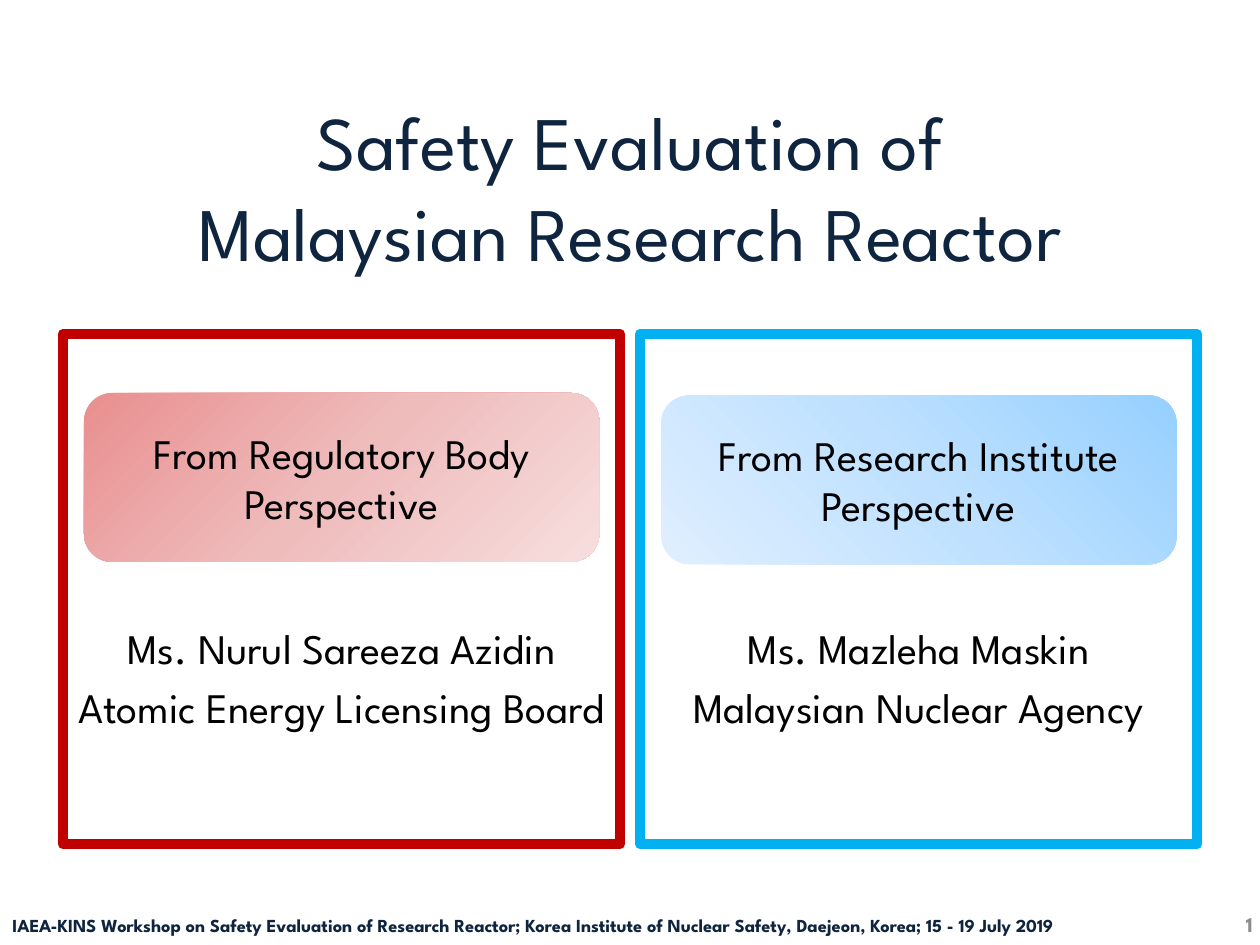
from dataclasses import dataclass

from lxml import etree
from pptx import Presentation
from pptx import util as u
from pptx.dml.color import RGBColor
from pptx.enum import shapes, text
from pptx.oxml import parse_xml
from pptx.oxml.ns import nsdecls, qn

FONT = "League Spartan"
COLORS = {"navy": "0F243E", "black": "000000", "gray": "8C8C8C",
          "red": "C00000", "blue": "00B0F0"}
LINEAR = '<a:lin ang="2700000" scaled="0"/>'
RADIAL = '<a:path path="circle"><a:fillToRect l="100000" b="100000"/></a:path>'


@dataclass
class Panel:
    left: float
    border: str
    heading: str
    heading_top: float
    stops: tuple[str, str, str]
    shading: str
    lines: tuple[str, ...]


PANELS = (
    Panel(36, "red", "From Regulatory Body Perspective", 224.6,
          ("E98F8F", "EFBCBC", "F7DEDE"), LINEAR,
          ("Ms. Nurul Sareeza Azidin", "Atomic Energy Licensing Board")),
    Panel(365.8, "blue", "From Research Institute Perspective", 226,
          ("96D0FF", "BFE1FF", "E0EFFF"), RADIAL,
          ("Ms. Mazleha Maskin", "Malaysian Nuclear Agency")),
)


def place(box, left: float, top: float, width: float, height: float) -> None:
    box.left, box.top, box.width, box.height = map(u.Pt, (left, top, width, height))


def write(box, lines: tuple[str, ...], size: float, color: str, align,
          bold: bool = False, before: float = 0) -> None:
    frame = box.text_frame
    frame.word_wrap = True
    frame.auto_size = text.MSO_AUTO_SIZE.NONE
    frame.vertical_anchor = text.MSO_ANCHOR.MIDDLE
    for index, line in enumerate(lines):
        para = frame.add_paragraph() if index else frame.paragraphs[0]
        para.text = line
        para.alignment = align
        para.space_before = u.Pt(before)
        para.font.name, para.font.size, para.font.bold = FONT, u.Pt(size), bold
        para.font.color.rgb = RGBColor.from_string(COLORS[color])


def add_box(page, kind, left: float, top: float, width: float, height: float):
    box = page.shapes.add_shape(kind, *map(u.Pt, (left, top, width, height)))
    box.shadow.inherit = False
    return box


def fill_gradient(box, stops: tuple[str, ...], shading: str) -> None:
    marks = "".join(f'<a:gs pos="{index * 50000}"><a:srgbClr val="{color}"/></a:gs>'
                    for index, color in enumerate(stops))
    gradient = parse_xml(f'<a:gradFill {nsdecls("a")} rotWithShape="1">'
                         f'<a:gsLst>{marks}</a:gsLst>{shading}</a:gradFill>')
    box._element.spPr.find(qn("a:prstGeom")).addnext(gradient)


def draw_panel(page, panel: Panel) -> None:
    # Frame with the speaker, set below the heading
    frame = add_box(page, shapes.MSO_SHAPE.RECTANGLE, panel.left, 190.8, 318.2, 291.6)
    frame.fill.background()
    frame.line.color.rgb = RGBColor.from_string(COLORS[panel.border])
    frame.line.width = u.Pt(6)
    write(frame, panel.lines, 24, "black", text.PP_ALIGN.CENTER, before=4.8)
    frame.text_frame.margin_top = u.Pt(104)

    # Heading
    heading = add_box(page, shapes.MSO_SHAPE.ROUNDED_RECTANGLE,
                      panel.left + 12, panel.heading_top, 294.5, 96.5)
    heading.line.fill.background()
    fill_gradient(heading, panel.stops, panel.shading)
    write(heading, (panel.heading,), 24, "black", text.PP_ALIGN.CENTER)


def draw_footer(page) -> None:
    note = page.shapes.add_textbox(*map(u.Pt, (0, 518.4, 694.8, 20.2)))
    write(note, ("IAEA-KINS Workshop on Safety Evaluation of Research Reactor; "
                 "Korea Institute of Nuclear Safety, Daejeon, Korea; 15 - 19 July 2019",),
          10.5, "navy", text.PP_ALIGN.LEFT, bold=True)

    # Slide number: turn the run into a field
    number = page.shapes.add_textbox(*map(u.Pt, (555.1, 513.4, 167.8, 28.8)))
    write(number, ("1",), 12, "gray", text.PP_ALIGN.RIGHT, bold=True)
    para = number.text_frame.paragraphs[0]
    span = para.runs[0]
    span.font.name, span.font.size, span.font.bold = FONT, u.Pt(12), True
    span.font.color.rgb = RGBColor.from_string(COLORS["gray"])
    field = etree.Element(qn("a:fld"), type="slidenum",
                          id="{B6F15528-21DE-4FAA-801E-634DDDAF4B2B}")
    span._r.addprevious(field)
    field.extend(list(span._r))
    para._p.remove(span._r)


def main() -> None:
    deck = Presentation()
    deck.slide_width, deck.slide_height = u.Pt(720), u.Pt(540)
    page = deck.slides.add_slide(deck.slide_layouts[5])

    # Title
    title = page.shapes.title
    place(title, 36, 21.6, 648, 169.2)
    write(title, ("Safety Evaluation of\vMalaysian Research Reactor",),
          43.2, "navy", text.PP_ALIGN.CENTER)

    for panel in PANELS:
        draw_panel(page, panel)
    draw_footer(page)
    deck.save("out.pptx")


if __name__ == "__main__":
    main()
